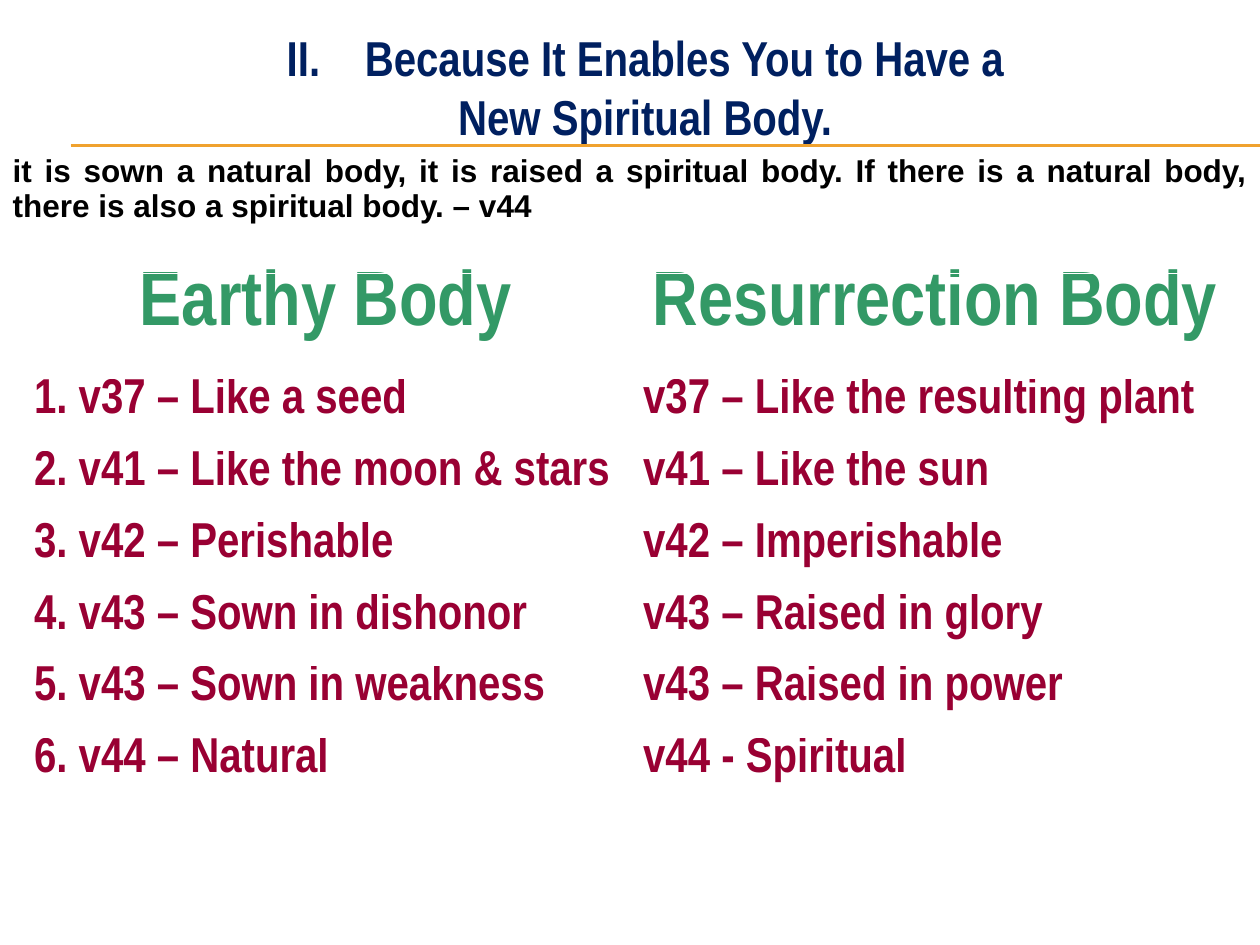
from lxml.etree import SubElement
from pptx import Presentation
from pptx.dml.color import RGBColor
from pptx.enum.shapes import MSO_CONNECTOR as Connector
from pptx.enum.text import MSO_ANCHOR as Anchor, PP_ALIGN as Align
from pptx.oxml.ns import qn
from pptx.util import Inches, Pt

NAVY, GREEN, MAROON = "002060", "339966", "990033"
BLACK, WHITE, GOLD = "000000", "FFFFFF", "F0A22E"
NARROW = "Arial Narrow"


def color(hex_code):
    return RGBColor.from_string(hex_code)


def write(paragraph, text, font=NARROW, size=28, fill=BLACK, align=Align.LEFT, spacing=1.0):
    paragraph.alignment = align
    paragraph.line_spacing = spacing
    run = paragraph.add_run()
    run.text = text
    run.font.name = font
    run.font.size = Pt(size)
    run.font.bold = True
    run.font.color.rgb = color(fill)


class VerseSlide:
    def __init__(self, deck):
        self.slide = deck.slides.add_slide(deck.slide_layouts[5])

    def title(self, lines, left, top, width, height, start):
        heading = self.slide.shapes.title
        heading.left, heading.top = Inches(left), Inches(top)
        heading.width, heading.height = Inches(width), Inches(height)
        frame = heading.text_frame
        frame.word_wrap = True
        frame.vertical_anchor = Anchor.TOP
        for index, line in enumerate(lines):
            paragraph = frame.add_paragraph() if index else frame.paragraphs[0]
            props = paragraph._p.get_or_add_pPr()
            props.set("marL", str(Inches(0.62)))
            props.set("indent", str(-Inches(0.62)))
            if index == 0:
                SubElement(props, qn("a:buFont"), typeface="+mj-lt")
                SubElement(props, qn("a:buAutoNum"), type="romanUcPeriod", startAt=str(start))
            else:
                SubElement(props, qn("a:buNone"))
            write(paragraph, line, fill=NAVY, align=Align.CENTER)

    def rule(self, left, right, y):
        line = self.slide.shapes.add_connector(
            Connector.STRAIGHT, Inches(left), Inches(y), Inches(right), Inches(y))
        line.line.color.rgb = color(GOLD)
        line.line.width = Pt(0.75)
        SubElement(line._element.spPr, qn("a:effectLst"))

    def table(self, rows, left, top, width, heights, formats, borders=None):
        grid = self.slide.shapes.add_table(
            len(rows), len(rows[0]), Inches(left), Inches(top),
            Inches(width), Inches(sum(heights))).table
        grid.first_row = grid.horz_banding = False
        for row, texts, height, style in zip(grid.rows, rows, heights, formats):
            row.height = Inches(height)
            for cell, text in zip(row.cells, texts):
                write(cell.text_frame.paragraphs[0], text, **style)
                for side, weight in (borders or {}).items():
                    self.border(cell, side, weight)
                cell.fill.background()

    def border(self, cell, side, weight):
        edge = SubElement(cell._tc.get_or_add_tcPr(), qn(f"a:ln{side}"), w=str(Pt(weight)))
        SubElement(SubElement(edge, qn("a:solidFill")), qn("a:srgbClr"), val=WHITE)


def main():
    deck = Presentation()
    deck.slide_width, deck.slide_height = Inches(10), Inches(7.5)
    page = VerseSlide(deck)

    for y in (1.15, 1.16):
        page.rule(0.56, 10, y)

    contrasts = [
        ("Earthy Body", "Resurrection Body"),
        ("1. v37 – Like a seed", "v37 – Like the resulting plant"),
        ("2. v41 – Like the moon & stars", "v41 – Like the sun"),
        ("3. v42 – Perishable", "v42 – Imperishable"),
        ("4. v43 – Sown in dishonor", "v43 – Raised in glory"),
        ("5. v43 – Sown in weakness", "v43 – Raised in power"),
        ("6. v44 – Natural", "v44 - Spiritual"),
    ]
    header = dict(size=44, fill=GREEN, align=Align.CENTER, spacing=0.8)
    body = dict(fill=MAROON, spacing=0.8)
    page.table(contrasts, 0.17, 2.17, 9.67, [0.83] + [0.57] * 6, [header] + [body] * 6)

    page.title(["Because It Enables You to Have a", "New Spiritual Body."],
               0.83, 0.17, 8.58, 1.04, start=2)

    verse = ("it is sown a natural body, it is raised a spiritual body. "
             "If there is a natural body, there is also a spiritual body. – v44")
    page.table([(verse,)], 0, 1.17, 10, [0.7],
               [dict(font="Arial", size=18, align=Align.JUSTIFY)],
               borders={"L": 1, "R": 1, "T": 1, "B": 3})

    deck.save("out.pptx")


if __name__ == "__main__":
    main()
